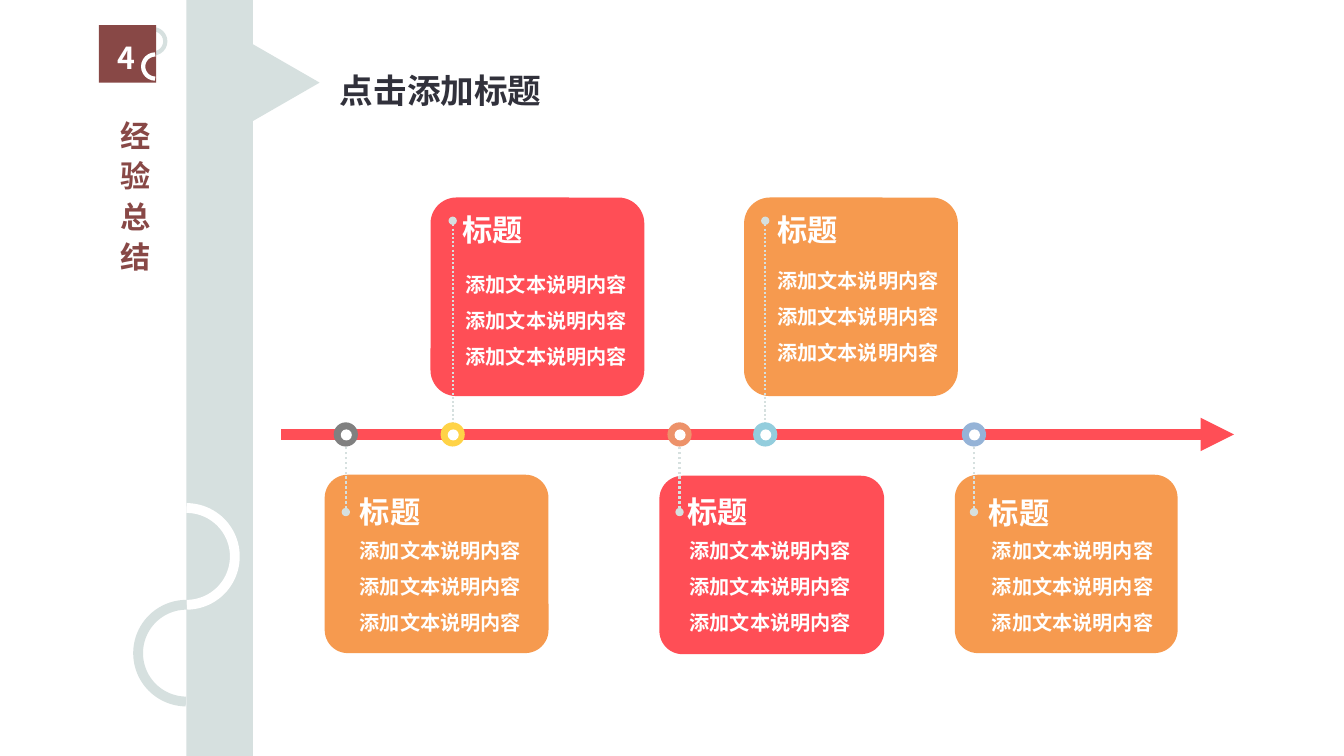
from lxml import etree
from pptx import Presentation
from pptx.dml.color import RGBColor
from pptx.enum.dml import MSO_LINE
from pptx.enum.shapes import MSO_CONNECTOR, MSO_SHAPE
from pptx.enum.text import MSO_ANCHOR, MSO_AUTO_SIZE, PP_ALIGN
from pptx.oxml.ns import qn
from pptx.util import Pt

PX = 9144  # 100 px to the inch
FONT = "Noto Sans CJK JP"
RED, ORANGE, MIST = "FF4E56", "F69A4F", "D6E0DF"
MAROON, INK, WHITE = "884846", "31313B", "FFFFFF"
RECT, ROUND = MSO_SHAPE.RECTANGLE, MSO_SHAPE.ROUNDED_RECTANGLE
OVAL, ARC = MSO_SHAPE.OVAL, MSO_SHAPE.ARC
WEDGE = MSO_SHAPE.ISOSCELES_TRIANGLE
STRAIGHT = MSO_CONNECTOR.STRAIGHT
DOTTED = MSO_LINE.ROUND_DOT
TOP, LEFT = MSO_ANCHOR.TOP, PP_ALIGN.LEFT
FIXED = MSO_AUTO_SIZE.NONE

AXIS = 431
HEAD = "标题"
BODY = ["添加文本说明内容"] * 3

# box, fill, stem x, stem end y, stem width, ring colour, heading box, body box
CARDS = [
    ((427, 196, 212, 197), RED, 449, 219, 1.5, "FFD347",
     (449, 205, 168, 46), (452, 253, 203, 115)),
    ((322, 471, 222, 177), ORANGE, 343, 508, 1.75, "808080",
     (347, 484, 112, 46), (347, 517, 189, 115)),
    ((654, 472, 223, 177), RED, 674, 508, 1.75, "ED926A",
     (672, 484, 233, 46), (674, 517, 202, 115)),
    ((738, 196, 212, 197), ORANGE, 759, 219, 1.5, "93CDDD",
     (761, 205, 168, 46), (761, 249, 205, 115)),
    ((947, 471, 221, 177), ORANGE, 966, 508, 1.75, "95B3D7",
     (971, 485, 300, 46), (974, 517, 186, 115)),
]


def emu(box):
    return [n * PX for n in box]


def rgb(code):
    return RGBColor.from_string(code)


def shape(slide, kind, box, fill):
    item = slide.shapes.add_shape(kind, *emu(box))
    item.shadow.inherit = False
    item.fill.solid()
    item.fill.fore_color.rgb = rgb(fill)
    item.line.fill.background()
    return item


def arc(slide, box, color, width, flip=False):
    """Draw the right half of a ring, or the left half if flipped."""
    item = slide.shapes.add_shape(ARC, *emu(box))
    item.shadow.inherit = False
    item.fill.background()
    item.line.color.rgb = rgb(color)
    item.line.width = Pt(width)
    item.adjustments[0] = 162
    item.adjustments[1] = 53.59
    if flip:
        item.element.spPr.find(qn("a:xfrm")).set("flipH", "1")


def line(slide, ends, color, width, head=None, tail=None, dash=None):
    item = slide.shapes.add_connector(STRAIGHT, *emu(ends))
    item.line.color.rgb = rgb(color)
    item.line.width = Pt(width)
    if dash:
        item.line.dash_style = dash
    ln = item.line._get_or_add_ln()
    for tag, kind in (("a:headEnd", head), ("a:tailEnd", tail)):
        if kind:
            etree.SubElement(ln, qn(tag)).set("type", kind)
    etree.SubElement(item.element.spPr, qn("a:effectLst"))


def write(item, lines, size, color=WHITE, gap=None, wrap=True, track=0,
          upright=False):
    """Fill a text box or placeholder with one paragraph per line."""
    frame = item.text_frame
    frame.word_wrap = wrap
    frame.auto_size = FIXED
    frame.vertical_anchor = TOP
    if upright:
        frame._txBody.bodyPr.set("vert", "eaVert")
    for i, words in enumerate(lines):
        para = frame.add_paragraph() if i else frame.paragraphs[0]
        para.alignment = LEFT
        if gap:
            para.line_spacing = gap
        run = para.add_run()
        run.text = words
        font = run.font
        font.size, font.bold, font.name = Pt(size), True, FONT
        font.color.rgb = rgb(color)
        props = run._r.get_or_add_rPr()
        etree.SubElement(props, qn("a:ea")).set("typeface", FONT)
        if track:
            props.set("spc", str(track))


def text(slide, box, lines, size, **form):
    write(slide.shapes.add_textbox(*emu(box)), lines, size, **form)


def card(slide, box, fill, x, end, width, ring, head, body):
    shape(slide, ROUND, box, fill).adjustments[0] = 0.13
    line(slide, (x, end, x, AXIS), MIST, width, "oval", "oval", DOTTED)
    shape(slide, OVAL, (x - 12, AXIS - 12, 24, 24), ring)
    shape(slide, OVAL, (x - 5, AXIS - 5, 11, 11), WHITE)
    text(slide, head, [HEAD], 21.6)
    text(slide, body, BODY, 14.4, gap=1.5)


def sidebar(slide):
    shape(slide, RECT, (185, 0, 66, 750), MIST)
    shape(slide, WEDGE, (246, 49, 76, 66), MIST).rotation = 90
    arc(slide, (140, 29, 24, 24), MIST, 3)
    shape(slide, RECT, (98, 25, 57, 57), MAROON)
    arc(slide, (142, 54, 24, 24), WHITE, 3, flip=True)
    text(slide, (99, 110, 57, 172), ["经验总结"], 21.6, color=MAROON,
         wrap=False, track=720, upright=True)
    text(slide, (107, 34, 38, 46), ["4"], 21.6, wrap=False)
    arc(slide, (137, 504, 96, 96), WHITE, 7)
    arc(slide, (137, 600, 96, 96), MIST, 7, flip=True)


def main():
    deck = Presentation()
    deck.slide_width, deck.slide_height = emu((1333, 750))
    slide = deck.slides.add_slide(deck.slide_layouts[5])
    title = slide.shapes.title
    title.left, title.top, title.width, title.height = emu((327, 44, 224, 65))
    write(title, ["点击添加标题"], 24, color=INK, gap=1.5, wrap=False)
    line(slide, (279, AXIS, 1224, AXIS), RED, 8, tail="triangle")
    for item in CARDS:
        card(slide, *item)
    sidebar(slide)
    deck.save("out.pptx")


if __name__ == "__main__":
    main()
